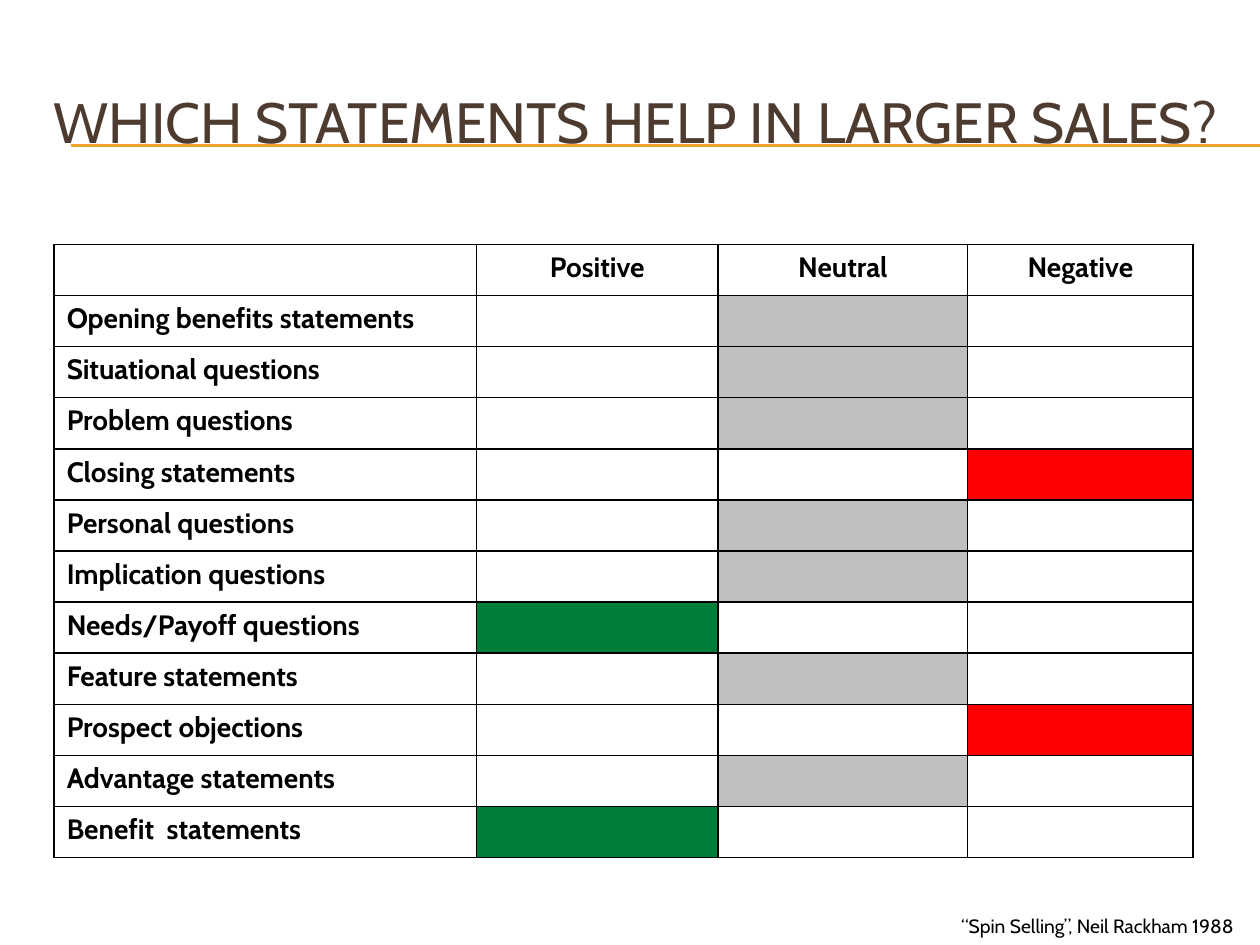
from dataclasses import dataclass

from lxml import etree
from pptx import Presentation
from pptx.dml.color import RGBColor
from pptx.enum.shapes import MSO_CONNECTOR
from pptx.enum.text import MSO_ANCHOR, MSO_AUTO_SIZE, PP_ALIGN
from pptx.oxml.ns import qn
from pptx.util import Inches, Pt

STRAIGHT = MSO_CONNECTOR.STRAIGHT
MIDDLE, TOP = MSO_ANCHOR.MIDDLE, MSO_ANCHOR.TOP
LEFT, CENTER = PP_ALIGN.LEFT, PP_ALIGN.CENTER
GROW, FIXED = MSO_AUTO_SIZE.SHAPE_TO_FIT_TEXT, MSO_AUTO_SIZE.NONE

COLORS = {
    "text": "000000",
    "title": "4E3B30",
    "rule": "F0A22E",
    "border": "000000",
    "Positive": "007E39",
    "Neutral": "BFBFBF",
    "Negative": "FF0000",
}
RATINGS = ["Positive", "Neutral", "Negative"]
STATEMENTS = [
    ("Opening benefits statements", "Neutral"),
    ("Situational questions", "Neutral"),
    ("Problem questions", "Neutral"),
    ("Closing statements", "Negative"),
    ("Personal questions", "Neutral"),
    ("Implication questions", "Neutral"),
    ("Needs/Payoff questions", "Positive"),
    ("Feature statements", "Neutral"),
    ("Prospect objections", "Negative"),
    ("Advantage statements", "Neutral"),
    ("Benefit  statements", "Positive"),
]
COLUMN_WIDTHS = [3.35, 1.92, 1.98, 1.79]
TABLE_HEIGHT = 4.87


@dataclass
class SlideBuilder:
    """Draws elements on one slide in a shared style."""

    slide: object
    font: str = "Cabin"

    def add_span(self, para, text, size, color="text", bold=False, align=LEFT):
        para.alignment = align
        span = para.add_run()
        span.text = text
        style = {"name": self.font, "size": Pt(size), "bold": bold}
        for name, value in style.items():
            setattr(span.font, name, value)
        span.font.color.rgb = RGBColor.from_string(COLORS[color])

    def text(self, place, text, size, color="text", **frame_format):
        box = self.slide.shapes.add_textbox(*map(Inches, place))
        for name, value in frame_format.items():
            setattr(box.text_frame, name, value)
        self.add_span(box.text_frame.paragraphs[0], text, size, color)

    def rule(self, left, right, top):
        line = self.slide.shapes.add_connector(
            STRAIGHT, Inches(left), Inches(top), Inches(right), Inches(top))
        line.line.color.rgb = RGBColor.from_string(COLORS["rule"])
        line.line.width = Pt(0.75)
        etree.SubElement(line._element.spPr, qn("a:effectLst"))

    def border(self, cell):
        properties = cell._tc.get_or_add_tcPr()
        for side in ("lnL", "lnR", "lnT", "lnB"):
            edge = etree.SubElement(properties, qn(f"a:{side}"), w=str(Pt(1)))
            fill = etree.SubElement(edge, qn("a:solidFill"))
            etree.SubElement(fill, qn("a:srgbClr"), val=COLORS["border"])

    def cell(self, cell, text, fill, align):
        cell.margin_bottom = 0
        self.border(cell)
        if fill:
            cell.fill.solid()
            cell.fill.fore_color.rgb = RGBColor.from_string(COLORS[fill])
        else:
            cell.fill.background()
        if text:
            self.add_span(cell.text_frame.paragraphs[0], text, 16, bold=True, align=align)

    def rating_table(self, left, top):
        row_count = len(STATEMENTS) + 1
        table = self.slide.shapes.add_table(
            row_count, len(COLUMN_WIDTHS), Inches(left), Inches(top),
            Inches(sum(COLUMN_WIDTHS)), Inches(TABLE_HEIGHT)).table
        for name in ("first_row", "horz_banding"):
            setattr(table, name, False)
        for column, width in zip(table.columns, COLUMN_WIDTHS):
            column.width = Inches(width)
        for row in table.rows:
            row.height = Inches(TABLE_HEIGHT / row_count)
        for index, heading in enumerate(["", *RATINGS]):
            self.cell(table.cell(0, index), heading, None, CENTER)
        for row, (statement, rating) in enumerate(STATEMENTS, 1):
            self.cell(table.cell(row, 0), statement, None, LEFT)
            for column, option in enumerate(RATINGS, 1):
                fill = option if option == rating else None
                self.cell(table.cell(row, column), "", fill, LEFT)


def main():
    deck = Presentation()
    deck.slide_width, deck.slide_height = Inches(10), Inches(7.5)
    page = SlideBuilder(deck.slides.add_slide(deck.slide_layouts[6]))
    for top in (1.15, 1.16):
        page.rule(0.56, 10, top)
    page.text((0.33, 0.5, 9.5, 0.92), "WHICH STATEMENTS HELP IN LARGER SALES?",
              32.4, "title", word_wrap=True, vertical_anchor=MIDDLE, auto_size=FIXED)
    page.text((7.53, 7.21, 2.46, 0.29), "“Spin Selling”, Neil Rackham 1988",
              11, word_wrap=False, vertical_anchor=TOP, auto_size=GROW)
    page.rating_table(0.43, 1.94)
    deck.save("out.pptx")


if __name__ == "__main__":
    main()
